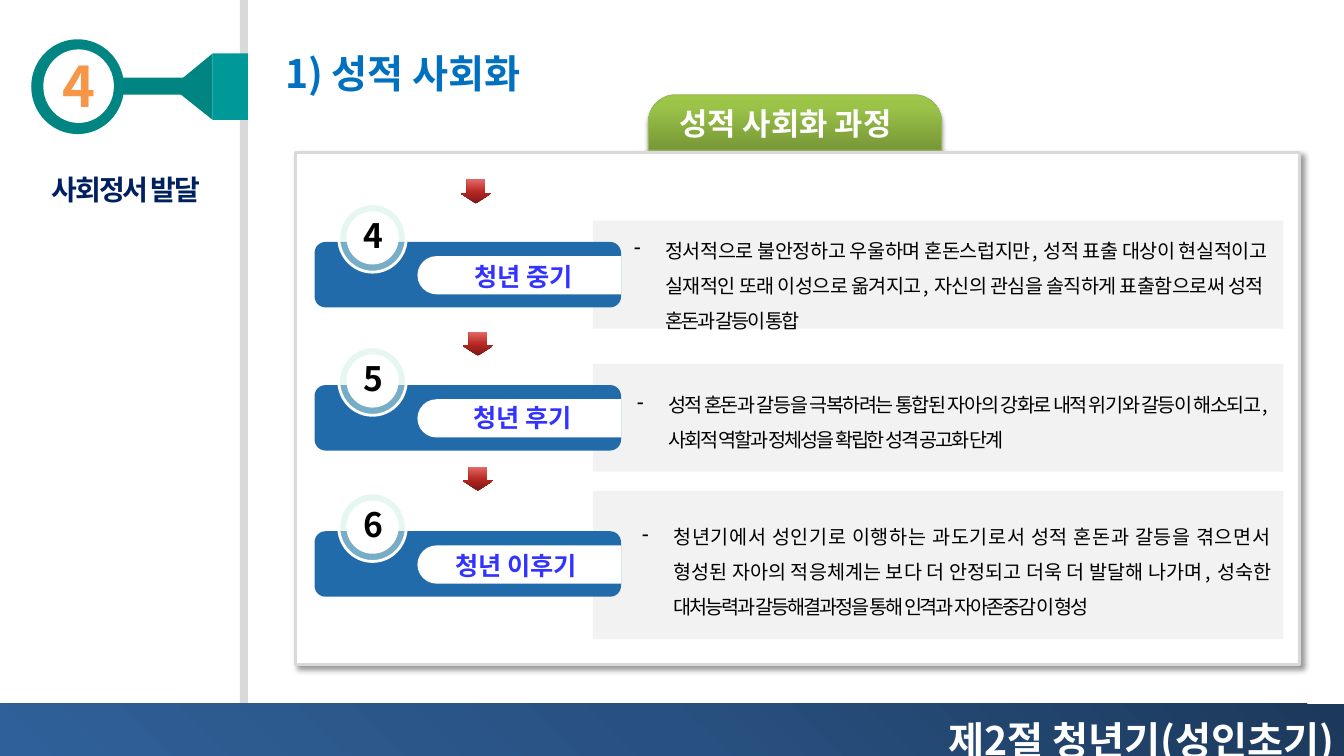
from copy import deepcopy
from lxml import etree
from pptx import Presentation, util as u
from pptx.dml.color import RGBColor
from pptx.enum import shapes, text
from pptx.oxml import parse_xml
from pptx.oxml.ns import qn, nsdecls

PX = 9144  # 100 px to the inch
KIND = shapes.MSO_SHAPE
ALIGN = text.PP_ALIGN
THEME = dict(
    font="Noto Sans CJK KR",
    white="FFFFFF", black="000000", rule="D9D9D9", panel="F2F2F2",
    teal="008582", aqua="009999", orange="F79646", navy="002060",
    title="0070C0", blue="226BAB", label="3333FF", mint="CFF0E5", edge="98B955",
    foot=(135, (0, "1C395B"), (50, "285181"), (100, "306099")),
    green=(270, (0, "779737"), (80, "9BC348"), (100, "9DC746")),
    red=(270, (0, "761916"), (48, "B82722"), (100, "E26A67")),
    huge=40, head=28, tab=22, side=20, num=24, name=18, body=14,
)

deck = Presentation()
deck.slide_width, deck.slide_height = 1333 * PX, 750 * PX
slide = deck.slides.add_slide(deck.slide_layouts[6])


def draw(kind, x, y, w, h, fill, line=None, wide=2, adj=(), turn=0, alpha=None, shade=None):
    """Draw a preset, or an outline when kind is a list of points."""
    if isinstance(kind, list):
        pen = slide.shapes.build_freeform(x + kind[0][0], y + kind[0][1], scale=PX)
        pen.add_line_segments([(x + a, y + b) for a, b in kind[1:]])
        form = pen.convert_to_shape()
    else:
        form = slide.shapes.add_shape(kind, x * PX, y * PX, w * PX, h * PX)
    for i, part in enumerate(adj):
        form.adjustments[i] = part
    form.rotation = turn
    form.shadow.inherit = False
    paint = THEME[fill]
    if isinstance(paint, tuple):
        stops = "".join(f'<a:gs pos="{p * 1000}"><a:srgbClr val="{c}"/></a:gs>' for p, c in paint[1:])
        form._element.spPr.find(qn("a:effectLst")).addprevious(parse_xml(
            f'<a:gradFill {nsdecls("a")} rotWithShape="1"><a:gsLst>{stops}</a:gsLst>'
            f'<a:lin ang="{paint[0] * 60000}" scaled="0"/></a:gradFill>'))
    else:
        form.fill.solid()
        form.fill.fore_color.rgb = RGBColor.from_string(paint)
    if alpha:
        tone = form._element.spPr.find(".//" + qn("a:srgbClr"))
        etree.SubElement(tone, qn("a:alpha"), val=str(alpha * 1000))
    if line:
        form.line.color.rgb = RGBColor.from_string(THEME[line])
        form.line.width = u.Pt(wide)
    else:
        form.line.fill.background()
    if shade:
        dim, blur, dist, way = shade
        form._element.spPr.find(qn("a:effectLst")).append(parse_xml(
            f'<a:outerShdw {nsdecls("a")} blurRad="{u.Pt(blur)}" dist="{u.Pt(dist)}" dir="{way * 60000}" '
            f'algn="ctr" rotWithShape="0"><a:srgbClr val="000000"><a:alpha val="{dim * 1000}"/>'
            '</a:srgbClr></a:outerShdw>'))


def write(words, x, y, w, h, size, color, bold=True, align=None, wrap=True, lead=None,
          track=None, rim=False, dash=False):
    form = slide.shapes.add_textbox(x * PX, y * PX, w * PX, h * PX)
    frame = form.text_frame
    frame.word_wrap = wrap
    frame.auto_size = text.MSO_AUTO_SIZE.SHAPE_TO_FIT_TEXT
    para = frame.paragraphs[0]
    para.text = words
    para.alignment = align
    if dash:
        prop = para._p.get_or_add_pPr()
        prop.set("marL", str(31 * PX))
        prop.set("indent", str(-31 * PX))
        etree.SubElement(prop, qn("a:buChar"), char="-")
    if lead:
        para.line_spacing = lead
    for run in para.runs:
        font = run.font
        font.name, font.size, font.bold = THEME["font"], u.Pt(THEME[size]), bold
        font.color.rgb = RGBColor.from_string(THEME[color])
        prop = run._r.get_or_add_rPr()
        etree.SubElement(prop, qn("a:ea"), typeface=THEME["font"])
        if track:
            prop.set("spc", str(int(track * 100)))
        if rim:
            prop.insert(0, parse_xml(
                f'<a:ln {nsdecls("a")} w="{u.Pt(1.4)}"><a:solidFill>'
                f'<a:srgbClr val="{THEME["white"]}"/></a:solidFill></a:ln>'))
    for gap in para._p.findall(qn("a:br")):
        gap.append(deepcopy(para.runs[0]._r.rPr))


# Side rule and number badge
draw(KIND.RECTANGLE, 238, 0, 8, 706, "rule")
draw(KIND.OVAL, 31, 39, 92, 94, "teal")
draw(KIND.OVAL, 43, 49, 70, 73, "white")
draw([(0, 28), (34, 0), (34, 66), (0, 39)], 177, 53, 34, 66, "teal")
draw(KIND.RECTANGLE, 211, 53, 35, 66, "aqua")
draw(KIND.RECTANGLE, 117, 77, 77, 17, "teal")
write("4", 52, 46, 53, 77, "huge", "orange", align=ALIGN.CENTER, wrap=False, rim=True)

# Footer and headings
draw(KIND.RECTANGLE, 0, 698, 1333, 55, "foot")
write("제2절 청년기(성인초기)", 643, 682, 690, 81, "head", "white", align=ALIGN.RIGHT, lead=1.5)
write("사회정서 발달", 0, 150, 250, 54, "side", "navy", align=ALIGN.CENTER, lead=1.5, track=-1.5)
write("1) 성적 사회화", 273, 44, 281, 57, "head", "title", wrap=False)

# Card with its tab
draw(KIND.ROUND_2_SAME_RECTANGLE, 643, 94, 291, 55, "green", "edge", 0.75, (0.5, 0),
     shade=(35, 3.1, 1.8, 90))
draw(KIND.RECTANGLE, 293, 151, 996, 508, "white", "rule", shade=(40, 4, 3, 45))
write("성적 사회화 과정", 664, 99, 258, 47, "tab", "white", wrap=False)

# Stages: number, name, name box (x, y, w), bar top, panel (y, h), arrow (x, y), note box, note
STAGES = [
    ("4", "청년 중기", (422, 254, 194), 240, (219, 107), (457, 178), (619, 220, 646, 112),
     "정서적으로 불안정하고 우울하며 혼돈스럽지만, 성적 표출 대상이 현실적이고 "
     "실재적인 또래 이성으로 옮겨지고, 자신의 관심을 솔직하게 표출함으로써 성적\v혼돈과 갈등이 통합"),
    ("5", "청년 후기", (415, 394, 207), 382, (361, 107), (459, 329), (622, 373, 643, 81),
     "성적 혼돈과 갈등을 극복하려는 통합된 자아의 강화로 내적 위기와 갈등이 해소되고, "
     "사회적 역할과 정체성을 확립한 성격 공고화 단계"),
    ("6", "청년 이후기", (407, 541, 210), 527, (487, 147), (459, 463), (627, 504, 646, 116),
     "청년기에서 성인기로 이행하는 과도기로서 성적 혼돈과 갈등을 겪으면서\v"
     "형성된 자아의 적응체계는 보다 더 안정되고 더욱 더 발달해 나가며, 성숙한\v"
     "대처능력과 갈등해결과정을 통해 인격과 자아존중감 이 형성"),
]
ARROW = [(15, 24), (30, 14), (24, 14), (24, 0), (6, 0), (6, 14), (0, 14)]
for num, name, (left, top, wide), bar, (high, tall), (ax, ay), area, note in STAGES:
    draw(KIND.RECTANGLE, 588, high, 685, tall, "panel")
    draw(KIND.ROUNDED_RECTANGLE, 312, bar, 304, 65, "blue")
    draw(KIND.ROUND_2_SAME_RECTANGLE, 496, bar - 68, 38, 202, "white", adj=(0.5, 0), turn=270)
    draw(KIND.OVAL, 336, bar - 38, 67, 68, "mint", "white", alpha=50)
    draw(KIND.OVAL, 345, bar - 29, 49, 50, "white", "white")
    draw(ARROW, ax, ay, 30, 24, "red")
    write(num, 351, bar - 32, 40, 50, "num", "black", wrap=False)
    write(name, left, top, wide, 40, "name", "label", align=ALIGN.CENTER)
    write(note, *area, "body", "black", bold=False, align=ALIGN.JUSTIFY, lead=1.5, track=-1.5, dash=True)

deck.save("out.pptx")
